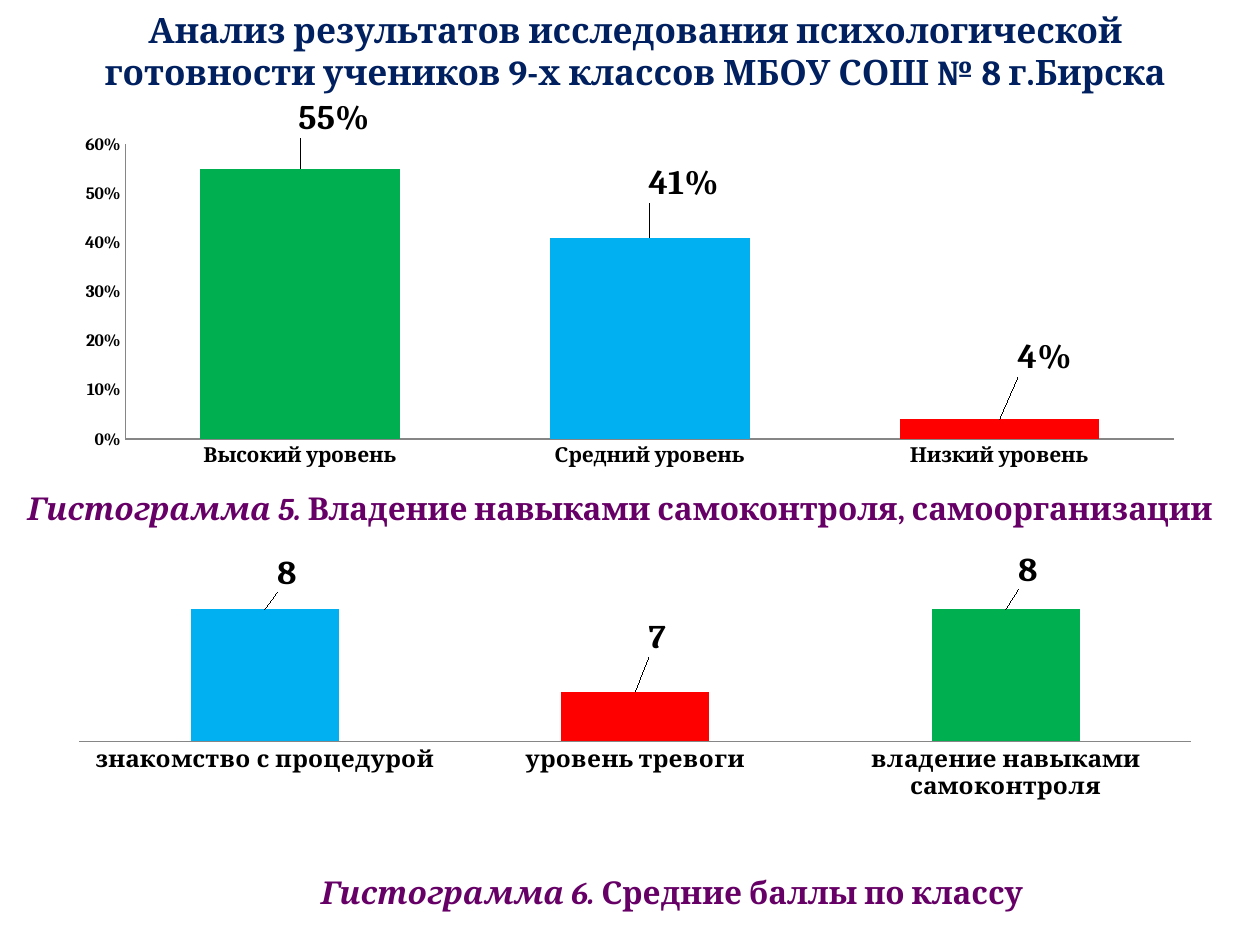
from pptx import Presentation
from pptx.util import Pt
from pptx.dml.color import RGBColor
from pptx.chart.data import CategoryChartData
from pptx.enum.chart import XL_CHART_TYPE as ChartType, XL_LABEL_POSITION as LabelPosition
from pptx.enum.chart import XL_TICK_MARK as TickMark
from pptx.enum.text import MSO_ANCHOR as Anchor, PP_ALIGN as Align
from pptx.oxml import parse_xml
from pptx.oxml.ns import nsdecls

FONT = "Cambria"
GREEN, BLUE, RED = "00B050", "00B0F0", "FF0000"
NO_LEADER_LINES = (
    f'<c:extLst {nsdecls("c")}><c:ext uri="{{CE6537A1-D6FC-4f65-9D91-7224C49458BB}}" '
    'xmlns:c15="http://schemas.microsoft.com/office/drawing/2012/chart">'
    '<c15:showLeaderLines val="0"/></c:ext></c:extLst>')


def color(value):
    """Turn a hex string into a colour."""
    return RGBColor.from_string(value)


def style(font, size, ink="000000", italic=None):
    """Apply the bold slide typeface to a font."""
    font.name, font.size, font.bold, font.italic = FONT, Pt(size), True, italic
    font.color.rgb = color(ink)


def manual_layout(**values):
    """Return a chart layout element with the given fractions."""
    parts = "".join(f'<c:{name} val="{value}"/>' for name, value in values.items())
    return parse_xml(f"<c:layout {nsdecls('c')}><c:manualLayout>{parts}</c:manualLayout></c:layout>")


def add_title(page, box, text):
    """Place the slide title in its placeholder."""
    title = page.shapes.title
    title.left, title.top, title.width, title.height = map(Pt, box)
    frame = title.text_frame
    frame.text = text
    frame.word_wrap, frame.vertical_anchor = True, Anchor.TOP
    para = frame.paragraphs[0]
    para.alignment = Align.CENTER
    style(para.runs[0].font, 20, "002060")


def add_caption(page, box, number, text):
    """Place a chart caption with an italic number."""
    frame = page.shapes.add_textbox(*map(Pt, box)).text_frame
    frame.word_wrap, frame.vertical_anchor = True, Anchor.MIDDLE
    para = frame.paragraphs[0]
    para.alignment = Align.CENTER
    for content, italic in ((number, True), (" " + text, False)):
        span = para.add_run()
        span.text = content
        style(span.font, 18, "660066", italic)


def add_bars(page, box, bars, plot_area, gap, category_size):
    """Place a column chart; each bar is name, value, colour, label shift, label text."""
    data = CategoryChartData(number_format="0%")
    data.categories = [bar[0] for bar in bars]
    data.add_series("Series 1", [bar[1] for bar in bars])
    chart = page.shapes.add_chart(ChartType.COLUMN_CLUSTERED, *map(Pt, box), data).chart
    chart.has_legend = chart.has_title = False
    style(chart.font, 10)

    values, categories = chart.value_axis, chart.category_axis
    values.has_major_gridlines = False
    values.tick_labels.number_format = "0%"
    values.tick_labels.number_format_is_linked = False
    for axis, size in ((values, 10), (categories, category_size)):
        axis.major_tick_mark = TickMark.NONE
        axis.format.line.color.rgb = color("868686")
        style(axis.tick_labels.font, size)

    plot = chart.plots[0]
    plot.gap_width, plot.vary_by_categories = gap, False
    left, top, width, height = plot_area
    area = chart._chartSpace.chart.plotArea
    for old in area.findall("{*}layout"):
        area.remove(old)
    area.insert(0, manual_layout(layoutTarget="inner", xMode="edge", yMode="edge",
                                 x=left, y=top, w=width, h=height))

    series = plot.series[0]
    labels = series.data_labels
    labels.show_value = True
    labels.number_format, labels.number_format_is_linked = "0%", False
    style(labels.font, 20)
    for point_index, (_, _, fill, shift, text) in enumerate(bars):
        point = series.points[point_index]
        point.format.fill.solid()
        point.format.fill.fore_color.rgb = color(fill)
        label = point.data_label
        if text:
            label.text_frame.text = text
            style(label.text_frame.paragraphs[0].runs[0].font, 20)
        else:
            style(label.font, 20)
        label.position = LabelPosition.OUTSIDE_END
        label._get_or_add_dLbl().insert(1, manual_layout(x=shift[0], y=shift[1]))
    labels._element.append(parse_xml(NO_LEADER_LINES))
    return chart


def build_slide(page):
    """Fill the slide with its title, two charts and captions."""
    add_title(page, (24, 1.5, 678, 56),
              "Анализ результатов исследования психологической готовности "
              "учеников 9-х классов МБОУ СОШ № 8 г.Бирска")
    add_caption(page, (-28, 275.5, 765, 29), "Гистограмма 5.",
                "Владение навыками самоконтроля, самоорганизации")
    add_caption(page, (66, 495, 636, 29), "Гистограмма 6.", "Средние баллы по классу")
    add_bars(page, (36, 56, 648, 214), [
        ("Высокий уровень", 0.55, GREEN, (0.03, -0.07), None),
        ("Средний уровень", 0.41, BLUE, (0.03, -0.08), None),
        ("Низкий уровень", 0.04, RED, (0.04, -0.1), None),
    ], (0.055, 0.11, 0.925, 0.8), 75, 12)
    scores = add_bars(page, (45, 315, 636, 180), [
        ("знакомство с процедурой", 0.08, BLUE, (0.02, -0.04), "8"),
        ("уровень тревоги", 0.07, RED, (0.02, -0.1), "7"),
        ("владение навыками самоконтроля", 0.08, GREEN, (0.02, -0.05), "8"),
    ], (0, 0.08, 1, 0.5), 150, 14)
    scores.value_axis.visible = False


def main():
    """Create and save the deck."""
    deck = Presentation()
    deck.slide_width, deck.slide_height = Pt(720), Pt(540)
    build_slide(deck.slides.add_slide(deck.slide_layouts[5]))
    deck.save("out.pptx")


if __name__ == "__main__":
    main()
